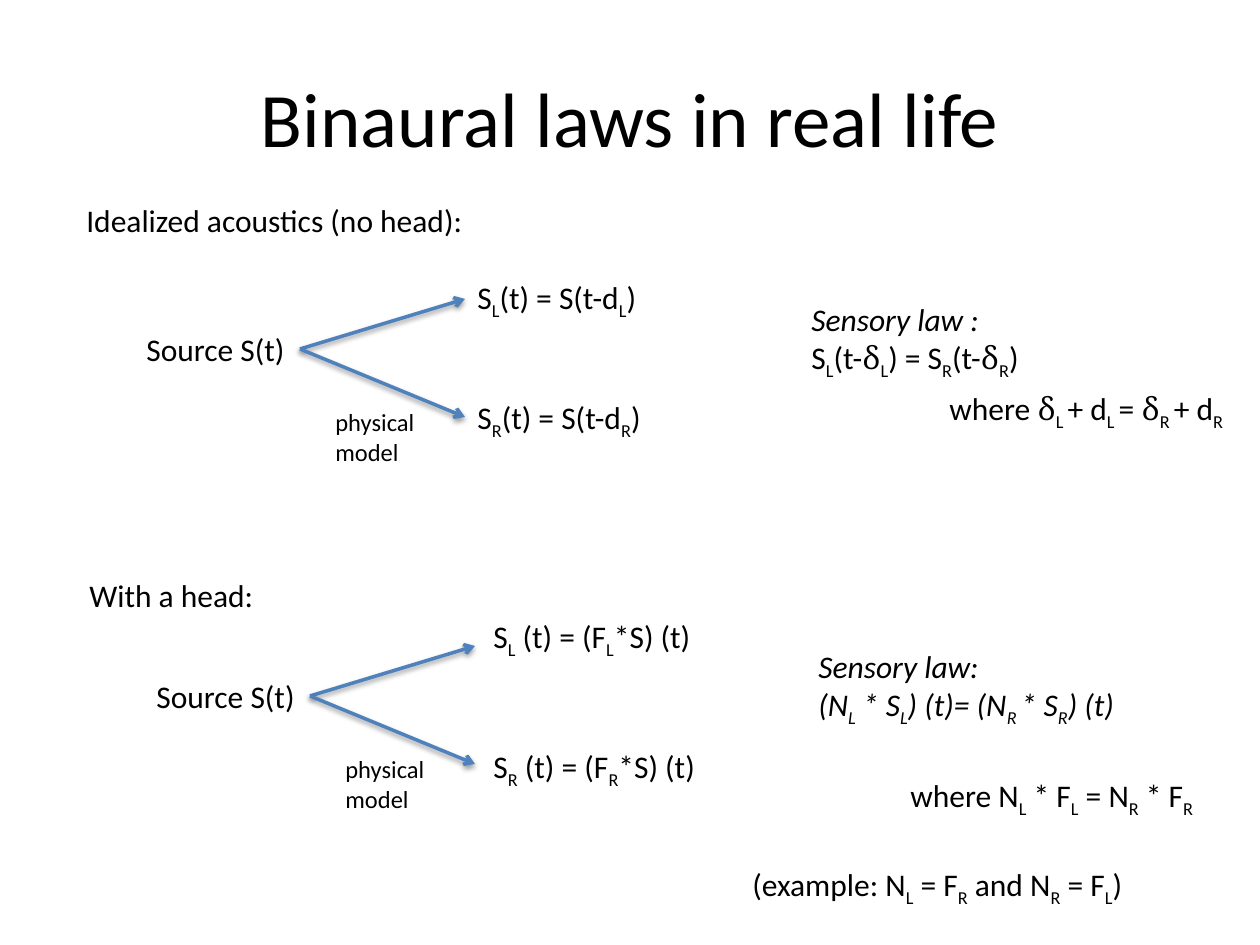
from lxml.etree import SubElement
from pptx import Presentation
from pptx.dml.color import RGBColor
from pptx.enum.shapes import MSO_CONNECTOR
from pptx.enum.text import MSO_ANCHOR, MSO_AUTO_SIZE, PP_ALIGN
from pptx.oxml.ns import qn
from pptx.util import Emu, Pt

PX = 914400 / 126
BLACK, BLUE = "000000", "4F81BD"
TITLE = "Binaural laws in real life"

# Braces mark subscripts; each line is (text, italic).
LABELS = [
    ((74, 195, 413, 50), [("Idealized acoustics (no head):", False)]),
    ((465, 272, 189, 50), [("S{L}(t) = S(t-d{L})", False)]),
    ((465, 392, 194, 50), [("S{R}(t) = S(t-d{R})", False)]),
    ((799, 294, 241, 89), [("Sensory law :", True), ("S{L}(t-δ{L}) = S{R}(t-δ{R})", False)]),
    ((937, 383, 306, 50), [("where δ{L }+ d{L }= δ{R }+ d{R}", False)]),
    ((77, 570, 192, 50), [("With a head:", False)]),
    ((481, 611, 227, 50), [("S{L} (t) = (F{L}*S) (t)", False)]),
    ((481, 741, 232, 50), [("S{R} (t) = (F{R}*S) (t)", False)]),
    ((806, 641, 339, 89), [("Sensory law:", True), ("(N{L} * S{L}) (t)= (N{R }* S{R}) (t)", True)]),
    ((898, 770, 323, 50), [("where N{L} * F{L} = N{R} * F{R}", False)]),
    ((740, 859, 406, 50), [("(example: N{L} = F{R} and N{R} = F{L})", False)]),
]
FAN_SHIFTS = [(0, 0), (10, 347)]
SOURCE = ((134, 324, 165, 50), "Source S(t)")
MODEL = ((323, 401, 149, 72), "physical model")
FAN_START = (300, 349)
FAN_ENDS = [(465, 299), (465, 417)]


def px(*lengths):
    """Turn pixel lengths into EMU."""
    return [Emu(round(length * PX)) for length in lengths]


def color(value):
    """Turn a hex string into a colour."""
    return RGBColor.from_string(value)


def pieces(markup):
    """Yield text, font name and subscript flag for each run of a markup line."""
    for index, part in enumerate(markup.replace("}", "{").split("{")):
        for number, text in enumerate(part.split("δ")):
            if number:
                yield "δ", "Cambria", False
            if text:
                yield text, "Calibri", index % 2 == 1


def write(paragraph, markup, size=18, italic=False, align=PP_ALIGN.LEFT):
    """Fill a paragraph with formatted runs."""
    paragraph.alignment = align
    for text, face, subscript in pieces(markup):
        run = paragraph.add_run()
        run.text = text
        run.font.name, run.font.size, run.font.italic = face, Pt(size), italic
        run.font.color.rgb = color(BLACK)
        if subscript:
            run.font._element.set("baseline", "-25000")


def add_label(slide, box, lines, size=18, wrap=False):
    """Add a text box with one paragraph per line."""
    frame = slide.shapes.add_textbox(*px(*box)).text_frame
    frame.word_wrap = wrap
    frame.auto_size = MSO_AUTO_SIZE.SHAPE_TO_FIT_TEXT
    for index, (markup, italic) in enumerate(lines):
        paragraph = frame.add_paragraph() if index else frame.paragraphs[0]
        write(paragraph, markup, size=size, italic=italic)


def add_ray(slide, start, end):
    """Add an arrow with a soft shadow below it."""
    ray = slide.shapes.add_connector(MSO_CONNECTOR.STRAIGHT, *px(*start, *end))
    ray.line.color.rgb = color(BLUE)
    ray.line.width = Pt(2)
    SubElement(ray.line._get_or_add_ln(), qn("a:tailEnd"), type="arrow")
    effects = SubElement(ray._element.spPr, qn("a:effectLst"))
    shadow = SubElement(effects, qn("a:outerShdw"), blurRad=str(Pt(3.1)),
                        dist=str(Pt(1.6)), dir="5400000", rotWithShape="0")
    tint = SubElement(shadow, qn("a:srgbClr"), val=BLACK)
    SubElement(tint, qn("a:alpha"), val="38000")


def add_fan(slide, shift):
    """Add a source with its two rays and model note, moved by the shift."""
    def moved(place):
        return (place[0] + shift[0], place[1] + shift[1], *place[2:])

    add_label(slide, moved(SOURCE[0]), [(SOURCE[1], False)])
    for end in FAN_ENDS:
        add_ray(slide, moved(FAN_START), moved(end))
    add_label(slide, moved(MODEL[0]), [(MODEL[1], False)], size=14, wrap=True)


def main():
    """Build and save the slide."""
    deck = Presentation()
    deck.slide_width, deck.slide_height = px(1260, 945)
    slide = deck.slides.add_slide(deck.slide_layouts[5])
    title = slide.shapes.title
    title.left, title.top, title.width, title.height = px(63, 38, 1134, 157)
    title.text_frame.vertical_anchor = MSO_ANCHOR.MIDDLE
    write(title.text_frame.paragraphs[0], TITLE, size=44, align=PP_ALIGN.CENTER)
    for box, lines in LABELS:
        add_label(slide, box, lines)
    for shift in FAN_SHIFTS:
        add_fan(slide, shift)
    deck.save("out.pptx")


if __name__ == "__main__":
    main()
